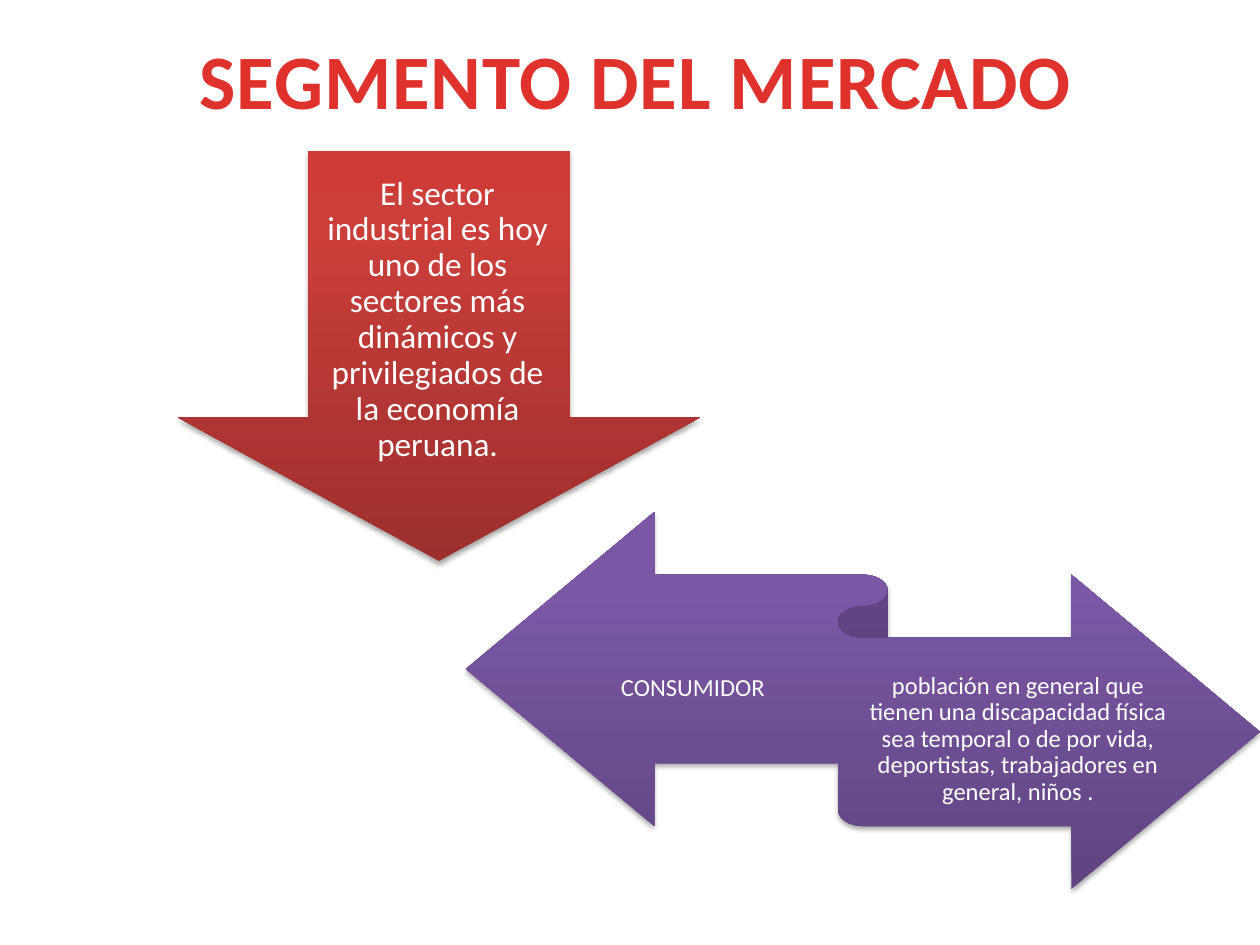
import pptx
import pptx.util
import pptx.dml.color
import pptx.enum.shapes
import pptx.enum.text
import pptx.oxml.ns
from lxml import etree

PX = 914400 / 126
SHAPE = pptx.enum.shapes.MSO_SHAPE
qn = pptx.oxml.ns.qn


def px(*lengths):
    return [pptx.util.Emu(round(length * PX)) for length in lengths]


def write(box, text, size, color, bold=False, line_spacing=None, insets=(13, 6, 13, 6)):
    frame = box.text_frame
    frame.word_wrap = True
    frame.vertical_anchor = pptx.enum.text.MSO_ANCHOR.MIDDLE
    frame.margin_left, frame.margin_top, frame.margin_right, frame.margin_bottom = px(*insets)
    para = frame.paragraphs[0]
    para.alignment = pptx.enum.text.PP_ALIGN.CENTER
    para.line_spacing = line_spacing
    span = para.add_run()
    span.text = text
    span.font.name = "Calibri"
    span.font.size = pptx.util.Pt(size)
    span.font.bold = bold
    span.font.color.rgb = pptx.dml.color.RGBColor.from_string(color)
    return span


deck = pptx.Presentation()
deck.slide_width, deck.slide_height = px(1260, 945)
page = deck.slides.add_slide(deck.slide_layouts[5])

title = page.shapes.title
title.left, title.top, title.width, title.height = px(69, 0, 1134, 158)
heading = write(title, "SEGMENTO DEL MERCADO", size=44, color="E0322D", bold=True)
heading.font._element.set("spc", "50")

arrows = [
    (SHAPE.DOWN_ARROW, (178, 151, 522, 410), (0.5, 0.35), ("9C2F2D", "CB3E3A", "CE3B37")),
    (SHAPE.LEFT_RIGHT_RIBBON, (466, 512, 794, 377), (), ("5F4480", "7B58A6", "7C57A8")),
]
for preset, place, adjustments, colors in arrows:
    arrow = page.shapes.add_shape(preset, *px(*place))
    for index, value in enumerate(adjustments):
        arrow.adjustments[index] = value
    arrow.line.fill.background()

    arrow.fill.gradient()
    arrow.fill.gradient_angle = 90
    properties = arrow._element.spPr
    stops = properties.find(qn("a:gradFill")).find(qn("a:gsLst"))
    for stop in list(stops):
        stops.remove(stop)
    for position, color in zip((0, 80, 100), colors):
        stop = etree.SubElement(stops, qn("a:gs"), pos=str(position * 1000))
        etree.SubElement(stop, qn("a:srgbClr"), val=color)

    arrow.shadow.inherit = False
    shadow = etree.SubElement(
        properties.find(qn("a:effectLst")), qn("a:outerShdw"),
        blurRad="39370", dist="22860", dir="5400000", rotWithShape="0",
    )
    shade = etree.SubElement(shadow, qn("a:srgbClr"), val="000000")
    etree.SubElement(shade, qn("a:alpha"), val="35000")

labels = [
    ("El sector industrial es hoy uno de los sectores más dinámicos y privilegiados "
     "de la economía peruana.", (307, 151, 261, 338), 19, (19, 19, 19, 19)),
    ("CONSUMIDOR", (562, 611, 262, 158), 14, (0, 6, 0, 8)),
    ("población en general que tienen una discapacidad física sea temporal o de por vida, "
     "deportistas, trabajadores en general, niños .", (863, 663, 310, 155), 14, (0, 6, 0, 8)),
]
for text, place, size, insets in labels:
    box = page.shapes.add_textbox(*px(*place))
    write(box, text, size=size, color="FFFFFF", line_spacing=0.9, insets=insets)

deck.save("out.pptx")
